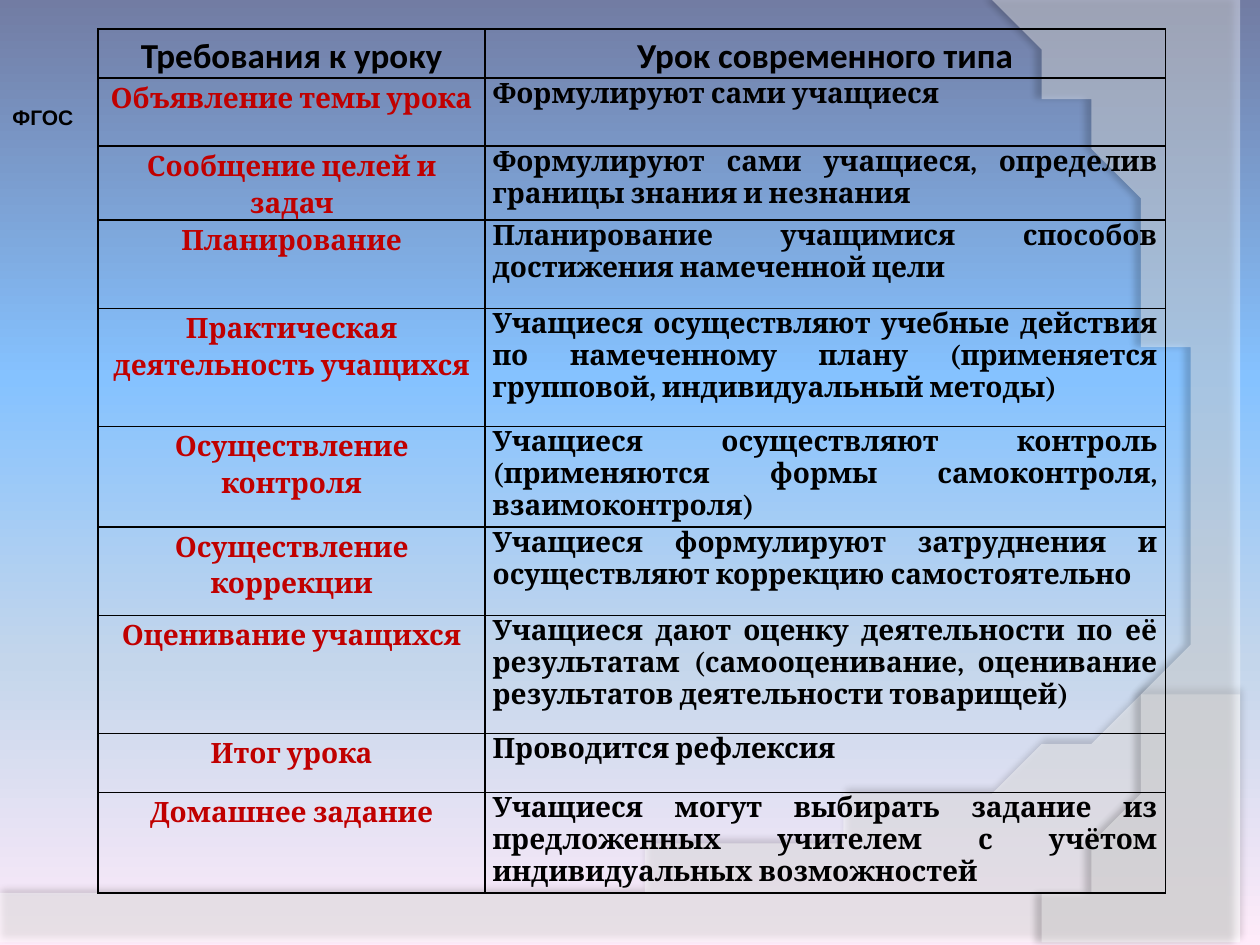
from dataclasses import dataclass

import pptx
import pptx.dml.color
import pptx.enum.text
import pptx.oxml
import pptx.oxml.ns
import pptx.util
from lxml import etree

Cm = pptx.util.Cm
Pt = pptx.util.Pt
qn = pptx.oxml.ns.qn
ALIGN = pptx.enum.text.PP_ALIGN


@dataclass(frozen=True)
class Theme:
    black: str = "000000"
    red: str = "C00000"
    white: str = "FFFFFF"
    sky: tuple = ((0, "727CA3"), (40, "85C2FF"), (70, "C4D6EB"), (100, "FFEBFA"))
    header_font: str = "Calibri"
    body_font: str = "Cambria"
    label_font: str = "Arial"
    header_size: int = 20
    body_size: int = 16
    label_size: int = 12


THEME = Theme()

COLUMN_WIDTHS = (7.8, 13.71)
HEADER = ("Требования к уроку", "Урок современного типа")
HEADER_HEIGHT = 0.97
# height in cm, requirement, modern lesson
REQUIREMENTS = (
    (1.37, "Объявление темы урока", "Формулируют сами учащиеся"),
    (1.37, "Сообщение целей и задач",
     "Формулируют сами учащиеся, определив границы знания и незнания"),
    (1.78, "Планирование",
     "Планирование учащимися способов достижения намеченной цели"),
    (2.38, "Практическая деятельность учащихся",
     "Учащиеся осуществляют учебные действия по намеченному плану "
     "(применяется групповой, индивидуальный методы)"),
    (2.03, "Осуществление контроля",
     "Учащиеся осуществляют контроль (применяются формы самоконтроля, взаимоконтроля)"),
    (1.78, "Осуществление коррекции",
     "Учащиеся формулируют затруднения и осуществляют коррекцию самостоятельно"),
    (2.38, "Оценивание учащихся",
     "Учащиеся дают оценку деятельности по её результатам "
     "(самооценивание, оценивание результатов деятельности товарищей)"),
    (1.19, "Итог урока", "Проводится рефлексия"),
    (2.03, "Домашнее задание",
     "Учащиеся могут выбирать задание из предложенных учителем "
     "с учётом индивидуальных возможностей"),
)


def rgb(value):
    return pptx.dml.color.RGBColor.from_string(value)


def add_color(parent, color, opacity=100):
    clr = etree.SubElement(parent, qn("a:srgbClr"), val=color)
    if opacity < 100:
        etree.SubElement(clr, qn("a:alpha"), val=str(opacity * 1000))


def set_background(s):
    fill = s.background.fill
    fill.gradient()
    fill.gradient_angle = 270
    stops = s.element.find(".//" + qn("a:gsLst"))
    for stop in list(stops):
        stops.remove(stop)
    for position, color in THEME.sky:
        add_color(etree.SubElement(stops, qn("a:gs"), pos=str(position * 1000)), color)


def bezier(start, c1, c2, end, steps=40):
    """Points of a cubic curve, without its start."""
    points = []
    for i in range(1, steps + 1):
        t = i / steps
        weights = ((1 - t) ** 3, 3 * t * (1 - t) ** 2, 3 * t * t * (1 - t), t ** 3)
        points.append(tuple(
            sum(w * p[axis] for w, p in zip(weights, (start, c1, c2, end)))
            for axis in (0, 1)))
    return points


def add_glass(s, corners, curve, opacity, shadow_opacity, distance, direction):
    """Translucent white sheet: straight corners, then a curve from the last one."""
    points = list(corners) + bezier(corners[-1], *curve)
    builder = s.shapes.build_freeform(*points[0], scale=Cm(1))
    builder.add_line_segments(points[1:], close=True)
    sp = builder.convert_to_shape()
    sp.fill.solid()
    sp.fill.fore_color.rgb = rgb(THEME.white)
    color = sp.element.spPr.find(qn("a:solidFill"))[0]
    etree.SubElement(color, qn("a:alpha"), val=str(opacity * 1000))
    sp.line.fill.background()
    sp.shadow.inherit = False
    shadow = etree.SubElement(
        sp.element.spPr.find(qn("a:effectLst")), qn("a:outerShdw"),
        blurRad=str(Pt(4)), dist=str(Pt(distance)), dir=str(direction * 60000),
        algn="ctr", rotWithShape="0")
    add_color(shadow, THEME.black, shadow_opacity)


def style_run(p, font, size, color):
    r = p.runs[0]
    r.font.name = font
    r.font.size = Pt(size)
    r.font.bold = True
    r.font.color.rgb = rgb(color)


def set_borders(cell):
    tc_pr = cell._tc.get_or_add_tcPr()
    for index, side in enumerate(("a:lnL", "a:lnR", "a:lnT", "a:lnB")):
        ln = pptx.oxml.parse_xml(
            f'<{side} {pptx.oxml.ns.nsdecls("a")} w="{Pt(1)}"><a:solidFill/></{side}>')
        add_color(ln[0], THEME.black)
        tc_pr.insert(index, ln)


def fill_cell(cell, text, font, size, color, justified=False):
    cell.margin_left = cell.margin_right = Cm(0.15)
    cell.margin_top = cell.margin_bottom = 0
    cell.fill.background()
    set_borders(cell)
    p = cell.text_frame.paragraphs[0]
    p.text = text
    p.alignment = ALIGN.JUSTIFY if justified else ALIGN.CENTER
    p.line_spacing = 1.0 if justified else 1.15
    p.space_after = Pt(10)
    style_run(p, font, size, color)


def add_requirements_table(s):
    heights = [HEADER_HEIGHT] + [row[0] for row in REQUIREMENTS]
    table = s.shapes.add_table(
        len(heights), len(COLUMN_WIDTHS), Cm(1.98), Cm(0.58),
        Cm(sum(COLUMN_WIDTHS)), Cm(sum(heights))).table
    table.first_row = table.horz_banding = False
    for column, width in zip(table.columns, COLUMN_WIDTHS):
        column.width = Cm(width)
    for row, height in zip(table.rows, heights):
        row.height = Cm(height)
    for col, title in enumerate(HEADER):
        fill_cell(table.cell(0, col), title,
                  THEME.header_font, THEME.header_size, THEME.black)
    for row, (_, requirement, modern) in enumerate(REQUIREMENTS, start=1):
        fill_cell(table.cell(row, 0), requirement,
                  THEME.body_font, THEME.body_size, THEME.red)
        fill_cell(table.cell(row, 1), modern,
                  THEME.body_font, THEME.body_size, THEME.black, justified=True)


def add_label(s, text):
    tf = s.shapes.add_textbox(Cm(0), Cm(1.98), Cm(1.78), Cm(0.94)).text_frame
    tf.word_wrap = True
    tf.auto_size = pptx.enum.text.MSO_AUTO_SIZE.SHAPE_TO_FIT_TEXT
    tf.text = text
    style_run(tf.paragraphs[0], THEME.label_font, THEME.label_size, THEME.black)


def main():
    prs = pptx.Presentation()
    prs.slide_width, prs.slide_height = Cm(25.4), Cm(19.05)
    s = prs.slides.add_slide(prs.slide_layouts[6])
    set_background(s)
    add_glass(s, ((0, 17.91), (0, 19.08), (25.4, 19.08), (25.4, 13.21)),
              ((14.2, 18.52), (9.93, 18.26), (0, 17.91)),
              opacity=45, shadow_opacity=35, distance=3.5, direction=270)
    add_glass(s, ((25.4, 0.05), (25.4, 19.05), (20.85, 19.05)),
              ((23.75, 15.72), (25.86, 7.62), (20.32, 0)),
              opacity=40, shadow_opacity=45, distance=4, direction=180)
    add_requirements_table(s)
    add_label(s, "ФГОС")
    prs.save("out.pptx")


if __name__ == "__main__":
    main()
